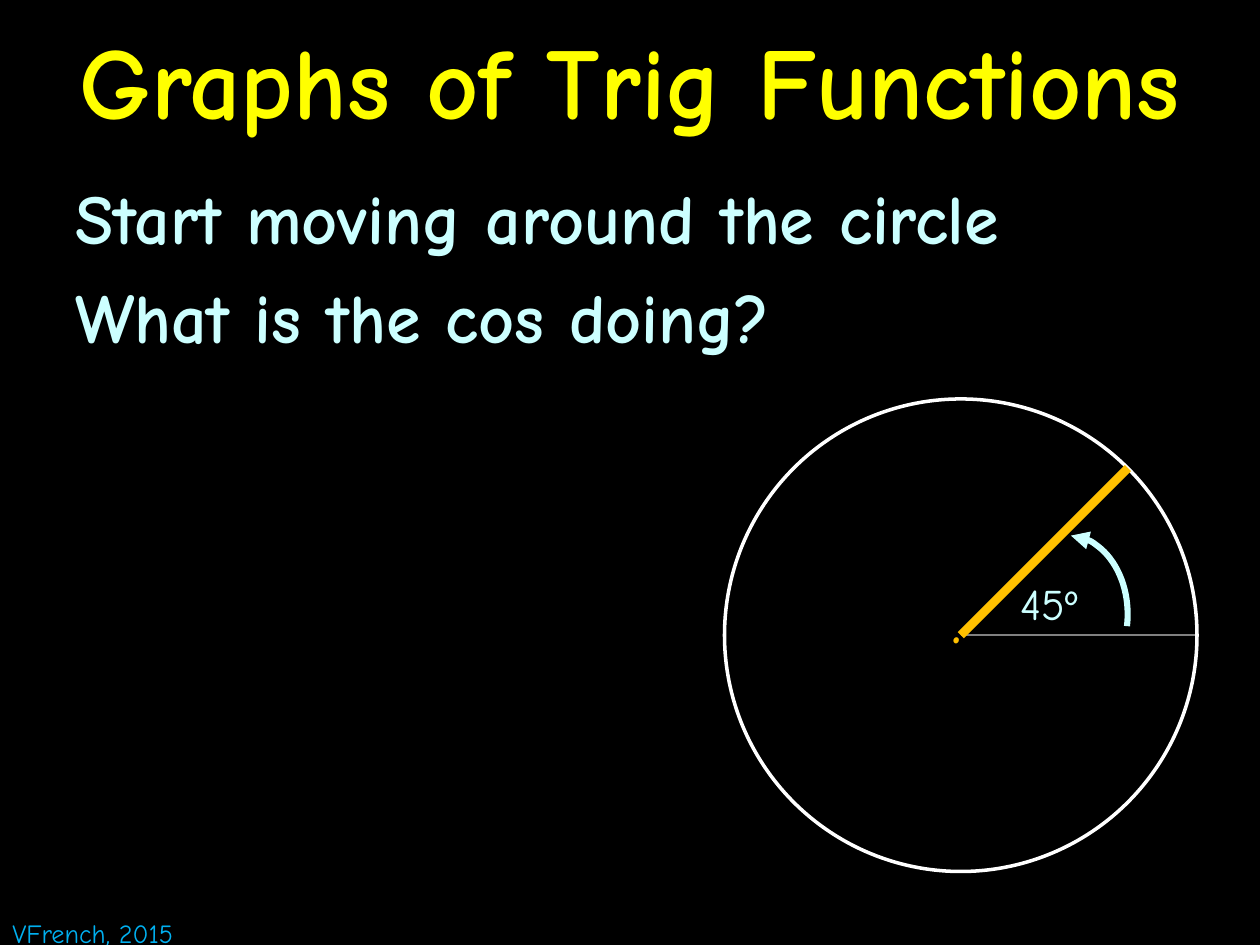
"""Build a slide showing a 45 degree turn around the unit circle."""
from dataclasses import dataclass

import lxml.etree
import pptx
import pptx.dml.color
import pptx.enum.shapes
import pptx.enum.text
import pptx.oxml.ns
import pptx.util

Pt = pptx.util.Pt
SHAPE = pptx.enum.shapes.MSO_SHAPE
ANCHOR = pptx.enum.text.MSO_ANCHOR
ALIGN = pptx.enum.text.PP_ALIGN
FONT = "Comic Neue"
COLORS = {
    "background": "000000",
    "title": "FFFF00",
    "pale": "CCFFFF",
    "radius": "FFC000",
    "axis": "808080",
    "circle": "FFFFFF",
    "credit": "00B0F0",
}


@dataclass
class Label:
    text: str
    left: float
    top: float
    width: float
    height: float
    size: float
    color: str
    bold: bool = False
    wrap: bool = True
    space_before: float = 0
    anchor: ANCHOR = ANCHOR.TOP
    align: ALIGN = ALIGN.LEFT


@dataclass
class Segment:
    x1: float
    y1: float
    x2: float
    y2: float
    color: str
    width: float


TITLE = Label("Graphs of Trig Functions", 0, 0, 720, 90, 58, "title", bold=True,
              anchor=ANCHOR.MIDDLE, align=ALIGN.CENTER)
BODY = Label("Start moving around the circle\nWhat is the cos doing?",
             36, 96, 648, 444, 40, "pale", bold=True, space_before=9)
CENTER_DOT = Label(".", 536.5, 324, 24.5, 55.5, 40, "radius", wrap=False)
ANGLE = Label("45º", 576, 326, 67, 37.5, 25, "pale")
CREDIT = Label("VFrench, 2015", 0, 520.5, 121.5, 25, 15, "credit", wrap=False)
AXIS = Segment(549, 363, 684, 363, "axis", 1)
RADIUS = Segment(549, 363, 644.5, 267.5, "radius", 5)


def rgb(name: str) -> pptx.dml.color.RGBColor:
    """Return a named colour."""
    return pptx.dml.color.RGBColor.from_string(COLORS[name])


def add_label(slide, label: Label) -> None:
    """Add a text box with one paragraph per line."""
    box = slide.shapes.add_textbox(Pt(label.left), Pt(label.top), Pt(label.width), Pt(label.height))
    tf = box.text_frame
    tf.text = label.text
    tf.word_wrap = label.wrap
    tf.vertical_anchor = label.anchor
    for p in tf.paragraphs:
        p.alignment = label.align
        p.space_before = Pt(label.space_before)
        for r in p.runs:
            r.font.name = FONT
            r.font.size = Pt(label.size)
            r.font.bold = label.bold
            r.font.color.rgb = rgb(label.color)


def style_line(s, color: str, width: float) -> None:
    """Set the colour and width of a line."""
    s.line.color.rgb = rgb(color)
    s.line.width = Pt(width)


def add_segment(slide, seg: Segment) -> None:
    """Add a straight line without a shadow."""
    s = slide.shapes.add_connector(pptx.enum.shapes.MSO_CONNECTOR.STRAIGHT,
                                   Pt(seg.x1), Pt(seg.y1), Pt(seg.x2), Pt(seg.y2))
    style_line(s, seg.color, seg.width)
    lxml.etree.SubElement(s.element.spPr, pptx.oxml.ns.qn("a:effectLst"))


def add_outline(slide, kind: SHAPE, left: float, top: float, width: float, height: float,
                color: str, weight: float):
    """Add an unfilled preset shape."""
    s = slide.shapes.add_shape(kind, Pt(left), Pt(top), Pt(width), Pt(height))
    s.shadow.inherit = False
    s.fill.background()
    style_line(s, color, weight)
    return s


def add_turn_arrow(slide) -> None:
    """Add the arc that points from the axis to the radius."""
    s = add_outline(slide, SHAPE.ARC, 576, 306, 68.4, 90, "pale", 3.5)
    for i, degrees in enumerate((272.24, 11.38)):
        s.adjustments[i] = degrees * 0.6
    head = lxml.etree.SubElement(s.line._get_or_add_ln(), pptx.oxml.ns.qn("a:headEnd"))
    head.set("type", "triangle")


def main() -> None:
    """Build and save the slide."""
    prs = pptx.Presentation()
    prs.slide_width, prs.slide_height = Pt(720), Pt(540)
    slide = prs.slides.add_slide(prs.slide_layouts[6])
    slide.background.fill.solid()
    slide.background.fill.fore_color.rgb = rgb("background")
    add_segment(slide, AXIS)
    add_label(slide, BODY)
    add_label(slide, TITLE)
    add_outline(slide, SHAPE.OVAL, 414, 228, 270, 270, "circle", 2)
    add_label(slide, CENTER_DOT)
    add_label(slide, ANGLE)
    add_segment(slide, RADIUS)
    add_label(slide, CREDIT)
    add_turn_arrow(slide)
    prs.save("out.pptx")


if __name__ == "__main__":
    main()
